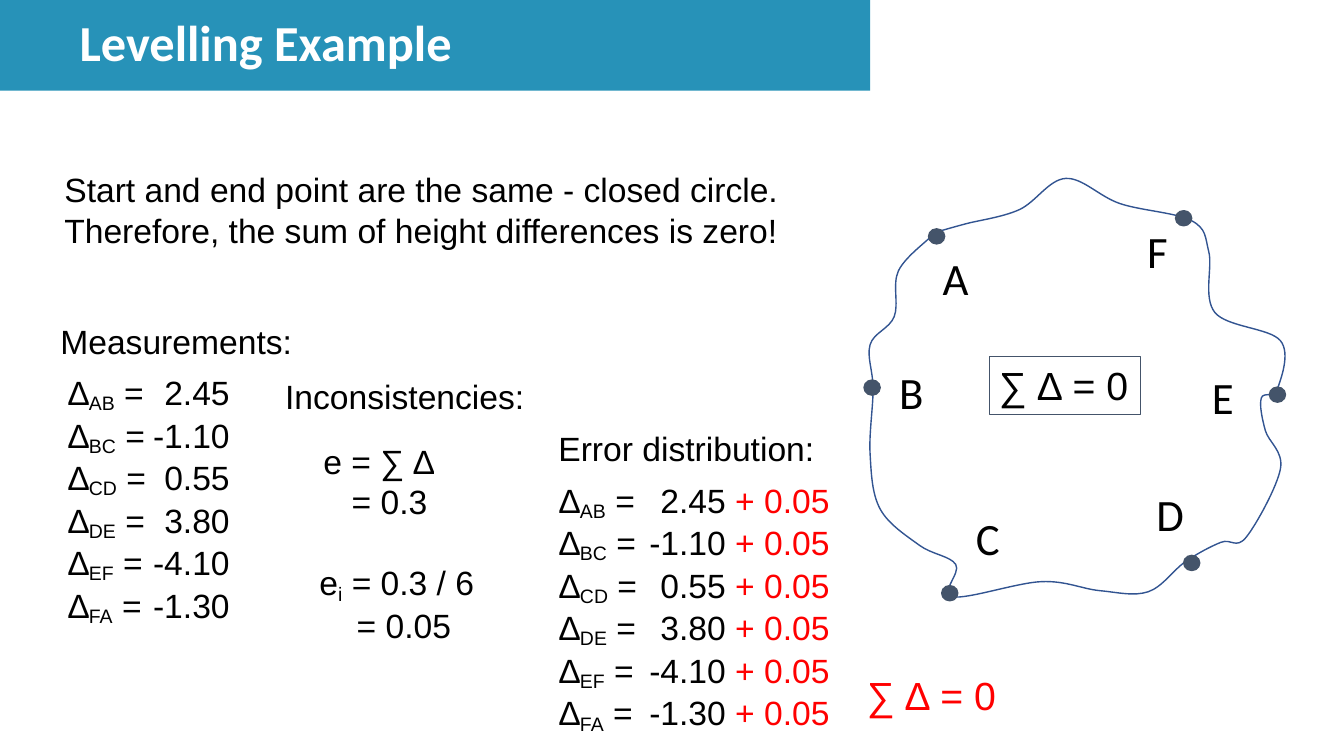
"""Build the levelling example slide with its closed survey loop."""
from lxml import etree
from pptx import Presentation
from pptx.dml.color import RGBColor
from pptx.enum.shapes import MSO_SHAPE as Shape
from pptx.enum.text import MSO_ANCHOR as Anchor, MSO_AUTO_SIZE as AutoSize, PP_ALIGN as Align
from pptx.oxml.ns import qn
from pptx.util import Inches, Pt

BLACK, RED, SLATE = "000000", "FF0000", "44546A"


def color(value):
    return RGBColor.from_string(value)


def add_text(box, lines, size=24, font="Arial", tint=BLACK, wrap=False, indents=(), tab=None):
    """Write lines made of (text, style) pieces; style is a colour or "sub"."""
    text_box = slide.shapes.add_textbox(*map(Inches, box))
    frame = text_box.text_frame
    frame.word_wrap = wrap
    frame.auto_size = AutoSize.SHAPE_TO_FIT_TEXT
    for index, pieces in enumerate(lines):
        paragraph = frame.paragraphs[0] if index == 0 else frame.add_paragraph()
        properties = paragraph._p.get_or_add_pPr()
        if index < len(indents):
            properties.set("marL", str(Inches(indents[index])))
        if tab:
            stops = etree.SubElement(properties, qn("a:tabLst"))
            etree.SubElement(stops, qn("a:tab"), pos=str(Inches(tab)), algn="r")
        for text, style in pieces:
            run = paragraph.add_run()
            run.text = text
            for name, value in {"size": Pt(size), "name": font}.items():
                setattr(run.font, name, value)
            run.font.color.rgb = color(style if style == RED else tint)
            if style == "sub":
                run._r.get_or_add_rPr().set("baseline", "-15000")
    return text_box


presentation = Presentation()
presentation.slide_width, presentation.slide_height = Inches(13.33), Inches(7.5)
slide = presentation.slides.add_slide(presentation.slide_layouts[5])

title = slide.shapes.title
title_place = {"left": 0, "top": 0, "width": 8.63, "height": 0.9}
for name, value in title_place.items():
    setattr(title, name, Inches(value))
title.fill.solid()
title.fill.fore_color.rgb = color("2792B8")
title.text_frame.text = "Levelling Example"
title_frame = {"margin_left": Inches(0.79), "margin_right": Inches(0.1),
               "margin_top": Inches(0.05), "margin_bottom": Inches(0.05),
               "vertical_anchor": Anchor.MIDDLE, "auto_size": AutoSize.NONE}
for name, value in title_frame.items():
    setattr(title.text_frame, name, value)
heading = title.text_frame.paragraphs[0]
heading.alignment, heading.line_spacing = Align.LEFT, 0.9
for name, value in {"size": Pt(36), "name": "Calibri", "bold": True}.items():
    setattr(heading.font, name, value)
heading.font.color.rgb = color("FFFFFF")

route = [
    (9.23, 2.35), (8.91, 2.69), (8.87, 3.14), (8.63, 3.42), (8.66, 3.86), (8.63, 4.5),
    (8.73, 5.05), (9.12, 5.41), (9.48, 5.6), (9.45, 5.92), (10.33, 5.77), (10.91, 5.86),
    (11.39, 5.87), (11.76, 5.57), (12.11, 5.38), (12.36, 5.33), (12.7, 4.65), (12.55, 4.27),
    (12.51, 3.95), (12.67, 3.86), (12.7, 3.38), (12.05, 3.1), (11.99, 2.5), (11.82, 2.19),
    (11.11, 2.02), (10.57, 1.77), (10.11, 2.08), (9.58, 2.22), (9.33, 2.29),
]
builder = slide.shapes.build_freeform(*map(Inches, route[0]))
builder.add_line_segments([tuple(map(Inches, point)) for point in route[1:]], close=False)
loop = builder.convert_to_shape()
loop.shadow.inherit = False
loop.fill.background()
loop.line.color.rgb = color("325491")
loop.line.width = Pt(1)

nodes = [(int(node.get("x")), int(node.get("y"))) for node in loop._element.iter(qn("a:pt"))]
padded = [nodes[0], *nodes, nodes[-1]]
segments = list(loop._element.iter(qn("a:lnTo")))
for segment, before, start, end, after in zip(segments, padded, padded[1:], padded[2:], padded[3:]):
    leave = [s + (e - b) / 6 for b, s, e in zip(before, start, end)]
    arrive = [e - (a - s) / 6 for s, e, a in zip(start, end, after)]
    bezier = etree.Element(qn("a:cubicBezTo"))
    for x, y in (leave, arrive, end):
        etree.SubElement(bezier, qn("a:pt"), x=str(round(x)), y=str(round(y)))
    segment.getparent().replace(segment, bezier)

stations = {
    "A": ((9.21, 2.27), (9.25, 2.44)),
    "B": ((8.57, 3.77), (8.82, 3.57)),
    "C": ((9.34, 5.81), (9.58, 5.02)),
    "D": ((11.74, 5.51), (11.37, 4.78)),
    "E": ((12.59, 3.84), (11.92, 3.62)),
    "F": ((11.66, 2.09), (11.28, 2.17)),
}
for letter, (dot_place, label_place) in stations.items():
    dot = slide.shapes.add_shape(Shape.OVAL, *map(Inches, (*dot_place, 0.16, 0.15)))
    dot.shadow.inherit = False
    dot.fill.solid()
    dot.fill.fore_color.rgb = dot.line.color.rgb = color(SLATE)
    dot.line.width = Pt(1)
    add_text((*label_place, 0.45, 0.64), [[(letter, None)]], size=32, font="Calibri")

statements = [
    ((0.54, 1.63, 7.35, 0.91), ["Start and end point are the same - closed circle.",
                                "Therefore, the sum of height differences is zero!"]),
    ((0.5, 3.13, 2.52, 0.5), ["Measurements:"]),
    ((2.73, 3.68, 2.6, 0.5), ["Inconsistencies:"]),
    ((5.44, 4.2, 2.77, 0.5), ["Error distribution:"]),
]
for box, lines in statements:
    add_text(box, [[(line, None)] for line in lines])

add_text((3.11, 4.32, 1.4, 0.91), [[("e = ∑ ∆", None)], [("= 0.3", None)]], indents=(0, 0.28))
add_text((3.07, 5.53, 1.76, 1.45),
         [[("e", None), ("i", "sub"), (" = 0.3 / 6", None)], [("= 0.05", None)]], indents=(0, 0.37))

differences = {"AB": "2.45", "BC": "-1.10", "CD": "0.55", "DE": "3.80", "EF": "-4.10", "FA": "-1.30"}
measured = [[("∆", None), (leg, "sub"), (f" =\t{value}", None)] for leg, value in differences.items()]
corrected = [[*pieces, (" + 0.05", RED)] for pieces in measured]
add_text((0.58, 3.64, 1.94, 2.63), measured, wrap=True, tab=1.6)
add_text((5.45, 4.71, 3.68, 2.63), corrected, wrap=True, tab=2.68)

closure = [[("∑ ∆ = 0", None)]]
closure_box = add_text((9.81, 3.54, 1.5, 0.57), closure, size=28)
closure_box.line.color.rgb = color(SLATE)
closure_box.line.width = Pt(0.75)
add_text((8.5, 6.61, 1.5, 0.57), closure, size=28, tint=RED)

presentation.save("out.pptx")
